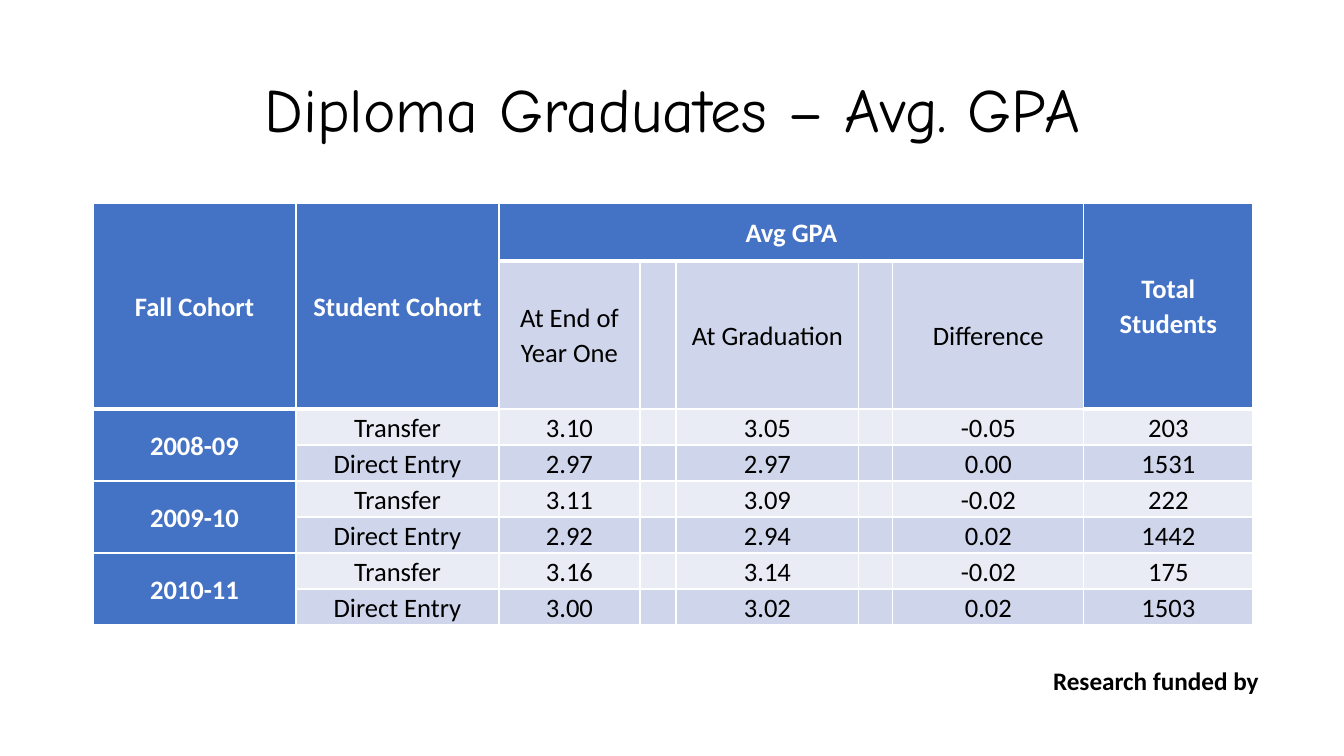
from lxml import etree
from pptx import Presentation
from pptx.dml.color import RGBColor
from pptx.enum.text import MSO_ANCHOR, PP_ALIGN
from pptx.oxml.ns import qn
from pptx.util import Emu, Pt

MIDDLE, TOP, CENTER = MSO_ANCHOR.MIDDLE, MSO_ANCHOR.TOP, PP_ALIGN.CENTER
PX = 914400 / 100.8
WHITE, BLACK, BLUE, DARK_BAND, LIGHT_BAND = "FFFFFF", "000000", "4472C4", "CFD5EA", "E9EBF5"

COLUMNS = [203, 203, 141, 36, 183, 34, 191, 169]
ROWS = [58, 148] + [36] * 6
HEADINGS = ["Fall Cohort", "Student Cohort", "Avg GPA", "", "", "", "", "Total Students"]
MEASURES = ["", "", "At End of Year One", "", "At Graduation", "", "Difference", ""]
RESULTS = [
    ("2008-09", "Transfer", "3.10", "3.05", "-0.05", "203"),
    ("", "Direct Entry", "2.97", "2.97", "0.00", "1531"),
    ("2009-10", "Transfer", "3.11", "3.09", "-0.02", "222"),
    ("", "Direct Entry", "2.92", "2.94", "0.02", "1442"),
    ("2010-11", "Transfer", "3.16", "3.14", "-0.02", "175"),
    ("", "Direct Entry", "3.00", "3.02", "0.02", "1503"),
]
MERGES = [(0, 0, 1, 0), (0, 1, 1, 1), (0, 2, 0, 6), (0, 7, 1, 7),
          (2, 0, 3, 0), (4, 0, 5, 0), (6, 0, 7, 0)]


def px(length):
    return Emu(round(length * PX))


def color(value):
    return RGBColor.from_string(value)


def is_heading(row, column):
    return row == 0 or (row == 1 and column in (0, 1, 7))


class SlideBuilder:
    """Holds the text style and the slide being built."""

    def __init__(self, slide, font):
        self.slide = slide
        self.font = font

    def fill_text(self, frame, text, size, ink=BLACK, bold=False, font=None, spacing=1.0):
        para = frame.paragraphs[0]
        para.alignment = CENTER
        para.line_spacing = spacing
        if text:
            span = para.add_run()
            span.text = text
            style = {"name": font or self.font, "size": Pt(size), "bold": bold}
            for name, value in style.items():
                setattr(span.font, name, value)
            span.font.color.rgb = color(ink)

    def text(self, left, top, width, height, text, size, anchor=TOP, **style):
        box = self.slide.shapes.add_textbox(px(left), px(top), px(width), px(height))
        box.text_frame.word_wrap = True
        box.text_frame.vertical_anchor = anchor
        self.fill_text(box.text_frame, text, size, **style)

    def borders(self, cell, widths):
        properties = cell._tc.get_or_add_tcPr()
        for side, width in widths.items():
            line = etree.SubElement(properties, qn(f"a:ln{side}"), w=str(Pt(width)))
            fill = etree.SubElement(line, qn("a:solidFill"))
            etree.SubElement(fill, qn("a:srgbClr"), val=WHITE)

    def cell(self, cell, text, row, column):
        heading = is_heading(row, column)
        label = heading or (row > 1 and column == 0)
        below_heading = row > 0 and is_heading(row - 1, column)
        self.borders(cell, {"L": 1, "R": 1, "T": 3 if below_heading else 1,
                            "B": 3 if heading else 1})
        cell.fill.solid()
        band = DARK_BAND if row % 2 else LIGHT_BAND
        cell.fill.fore_color.rgb = color(BLUE if label else band)
        side, edge = (13, 6) if label and text else (15 if text else 0, 0)
        layout = {"margin_left": px(side), "margin_right": px(side), "margin_top": px(edge),
                  "margin_bottom": px(edge), "vertical_anchor": MIDDLE}
        for name, value in layout.items():
            setattr(cell, name, value)
        self.fill_text(cell.text_frame, text, 19, WHITE if label else BLACK, label, spacing=1.07)

    def table(self, left, top, columns, rows, contents, merges):
        frame = self.slide.shapes.add_table(len(rows), len(columns), px(left), px(top),
                                            px(sum(columns)), px(sum(rows)))
        table = frame.table
        for column, width in zip(table.columns, columns):
            column.width = px(width)
        for row, height in zip(table.rows, rows):
            row.height = px(height)
        for row, texts in enumerate(contents):
            for column, text in enumerate(texts):
                self.cell(table.cell(row, column), text, row, column)
        for first_row, first_column, last_row, last_column in merges:
            table.cell(first_row, first_column).merge(table.cell(last_row, last_column))


def main():
    deck = Presentation()
    deck.slide_width, deck.slide_height = px(1344), px(756)
    page = SlideBuilder(deck.slides.add_slide(deck.slide_layouts[6]), "Calibri")
    page.text(1005, 660, 302, 40, "Research funded by", 18, bold=True)
    page.text(93, 40, 1159, 146, "Diploma Graduates – Avg. GPA", 44, MIDDLE,
              font="Comic Neue", spacing=0.9)
    body = [(year, group, first, "", final, "", change, total)
            for year, group, first, final, change, total in RESULTS]
    page.table(93, 203, COLUMNS, ROWS, [HEADINGS, MEASURES] + body, MERGES)
    deck.save("out.pptx")


if __name__ == "__main__":
    main()
